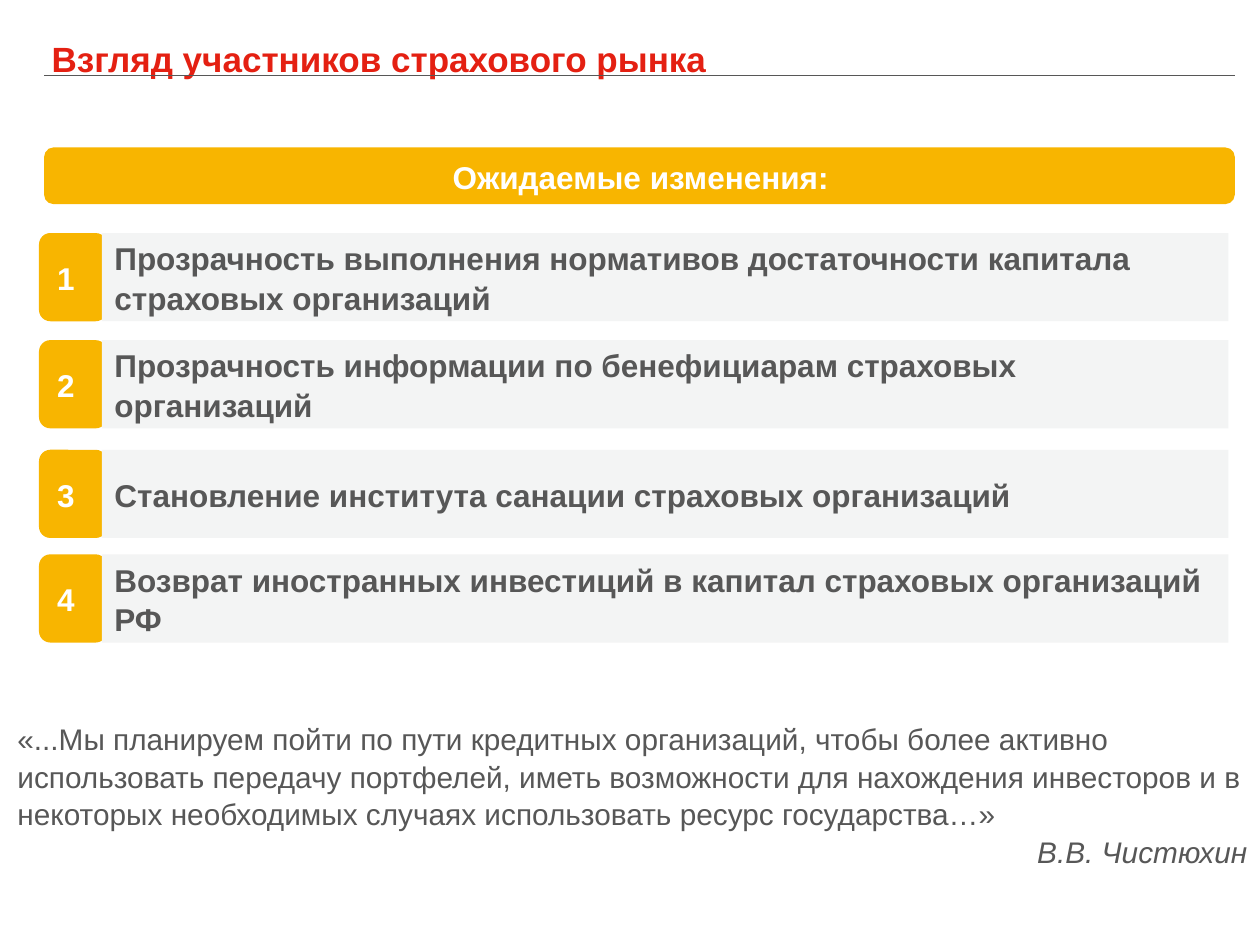
from lxml.etree import SubElement
from pptx import Presentation
from pptx.dml.color import RGBColor
from pptx.enum.shapes import MSO_CONNECTOR, MSO_SHAPE
from pptx.enum.text import MSO_ANCHOR, MSO_AUTO_SIZE, PP_ALIGN
from pptx.oxml.ns import qn
from pptx.util import Inches, Pt

# Content
TITLE = "Взгляд участников страхового рынка"
HEADING = "Ожидаемые изменения:"
CHANGES = [  # top edge, text
    (1.85, "Прозрачность выполнения нормативов достаточности капитала страховых организаций"),
    (2.7, "Прозрачность информации по бенефициарам страховых организаций"),
    (3.57, "Становление института санации страховых организаций"),
    (4.4, "Возврат иностранных инвестиций в капитал страховых организаций РФ"),
]
QUOTE = (
    "«...Мы планируем пойти по пути кредитных организаций, чтобы более активно "
    "использовать передачу портфелей, иметь возможности для нахождения инвесторов и в "
    "некоторых необходимых случаях использовать ресурс государства…»"
)
AUTHOR = "В.В. Чистюхин"

# Style
FONT = "Arial"
RED = RGBColor(0xE4, 0x20, 0x12)
YELLOW = RGBColor(0xF8, 0xB5, 0x00)
GRAY = RGBColor(0x57, 0x57, 0x57)
LIGHT_GRAY = RGBColor(0xF3, 0xF4, 0xF4)
WHITE = RGBColor(0xFF, 0xFF, 0xFF)
ROW_HEIGHT = 0.7


def write(paragraph, text, size=18, color=GRAY, bold=False, italic=False,
          align=PP_ALIGN.LEFT, indent=0):
    paragraph.alignment = align
    paragraph.line_spacing = 1.05
    if indent:
        paragraph._p.get_or_add_pPr().set("marL", str(Inches(indent)))
    run = paragraph.add_run()
    run.text = text
    run.font.name = FONT
    run.font.size = Pt(size)
    run.font.bold = bold
    run.font.italic = italic
    run.font.color.rgb = color


def add_block(slide, preset, box, fill, text, **text_format):
    shape = slide.shapes.add_shape(preset, *map(Inches, box))
    shape.shadow.inherit = False
    shape.fill.solid()
    shape.fill.fore_color.rgb = fill
    shape.line.fill.background()
    shape.text_frame.word_wrap = True
    shape.text_frame.vertical_anchor = MSO_ANCHOR.MIDDLE
    write(shape.text_frame.paragraphs[0], text, bold=True, **text_format)


def main():
    presentation = Presentation()
    presentation.slide_width = Inches(10)
    presentation.slide_height = Inches(7.5)
    slide = presentation.slides.add_slide(presentation.slide_layouts[5])

    # Title and rule
    title = slide.shapes.title
    title.left, title.top, title.width, title.height = map(Inches, (0.31, 0.23, 6.1, 0.44))
    title.text_frame.word_wrap = True
    title.text_frame.auto_size = MSO_AUTO_SIZE.NONE
    title.text_frame.vertical_anchor = MSO_ANCHOR.TOP
    write(title.text_frame.paragraphs[0], TITLE, size=20, color=RED, bold=True)

    rule = slide.shapes.add_connector(
        MSO_CONNECTOR.STRAIGHT, *map(Inches, (0.35, 0.6, 9.8, 0.6)))
    rule.line.color.rgb = GRAY
    rule.line.width = Pt(0.75)
    SubElement(rule._element.spPr, qn("a:effectLst"))

    # Heading and numbered changes
    add_block(slide, MSO_SHAPE.ROUNDED_RECTANGLE, (0.35, 1.17, 9.45, 0.45), YELLOW,
              HEADING, color=WHITE, align=PP_ALIGN.CENTER, indent=0.02)
    for number, (top, text) in enumerate(CHANGES, start=1):
        add_block(slide, MSO_SHAPE.ROUNDED_RECTANGLE, (0.31, top, 0.54, ROW_HEIGHT), YELLOW,
                  str(number), color=WHITE, indent=0.02)
        add_block(slide, MSO_SHAPE.RECTANGLE, (0.81, top, 8.94, ROW_HEIGHT), LIGHT_GRAY, text)

    # Quote
    quote = slide.shapes.add_textbox(*map(Inches, (0.04, 5.66, 9.96, 1.25))).text_frame
    quote.word_wrap = True
    write(quote.paragraphs[0], QUOTE, size=17)
    write(quote.add_paragraph(), AUTHOR, size=17, italic=True, align=PP_ALIGN.RIGHT)

    presentation.save("out.pptx")


if __name__ == "__main__":
    main()
